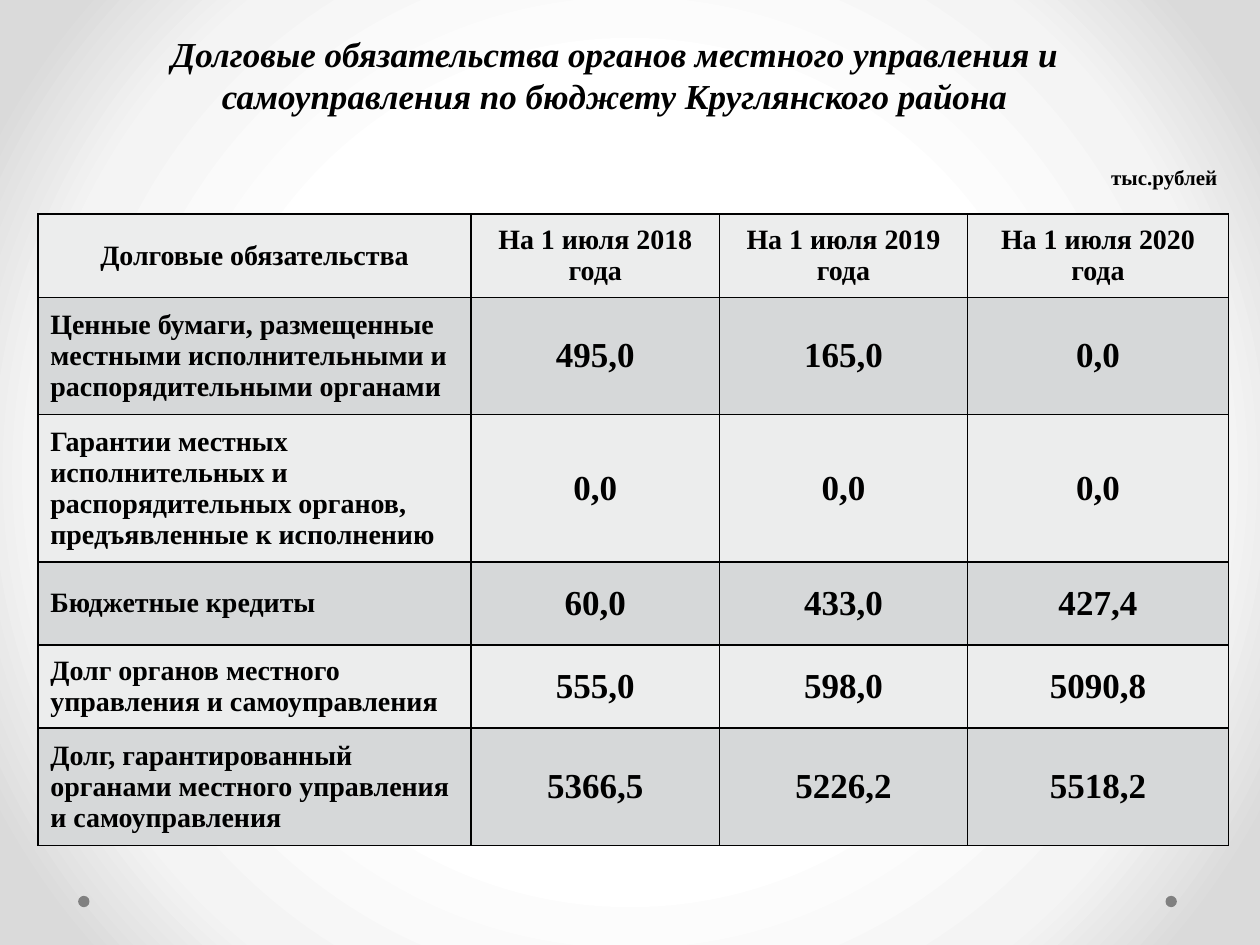
"""Build a slide with a table of local government debt obligations."""
from dataclasses import dataclass

from pptx import Presentation
from pptx.dml.color import RGBColor
from pptx.enum.shapes import MSO_SHAPE
from pptx.enum.text import MSO_ANCHOR, PP_ALIGN as Align
from pptx.oxml import parse_xml
from pptx.oxml.ns import nsdecls
from pptx.slide import Slide
from pptx.table import _Cell as Cell
from pptx.text.text import TextFrame
from pptx.util import Inches, Pt

BLACK = "000000"
DOT_GRAY = "808080"
BANDS = ("ECEDED", "D6D8D9")
GLOW = ((0, "FFFFFF"), (50, "FFFFFF"), (76, "F4F4F4"), (92, "DADADA"), (100, "DADADA"))
COLUMN_WIDTHS = (3.44, 1.97, 1.97, 2.07)


@dataclass(frozen=True)
class Caption:
    text: str
    box: tuple[float, float, float, float]
    size: int
    align: Align
    italic: bool = False
    wrap: bool = True


@dataclass(frozen=True)
class Row:
    height: float
    label: str
    values: tuple[str, str, str]


CAPTIONS = (
    Caption("Долговые обязательства органов местного управления и самоуправления "
            "по бюджету Круглянского района",
            (0.51, 0.21, 8.74, 0.77), 20, Align.CENTER, italic=True),
    Caption("тыс.рублей", (8.71, 1.26, 1.05, 0.3), 12, Align.RIGHT, wrap=False),
)
ROWS = (
    Row(0.66, "Долговые обязательства",
        ("На 1 июля 2018 года", "На 1 июля 2019 года", "На 1 июля 2020 года")),
    Row(0.93, "Ценные бумаги, размещенные местными исполнительными и "
        "распорядительными органами", ("495,0", "165,0", "0,0")),
    Row(1.17, "Гарантии местных исполнительных и распорядительных органов, "
        "предъявленные к исполнению", ("0,0", "0,0", "0,0")),
    Row(0.66, "Бюджетные кредиты", ("60,0", "433,0", "427,4")),
    Row(0.66, "Долг органов местного управления и самоуправления",
        ("555,0", "598,0", "5090,8")),
    Row(0.93, "Долг, гарантированный органами местного управления и "
        "самоуправления", ("5366,5", "5226,2", "5518,2")),
)


def color(value: str) -> RGBColor:
    return RGBColor.from_string(value)


def write(frame: TextFrame, text: str, size: int, align: Align, italic: bool = False) -> None:
    paragraph = frame.paragraphs[0]
    paragraph.text = text
    paragraph.alignment = align
    font = paragraph.font
    font.name, font.size = "Times New Roman", Pt(size)
    font.bold, font.italic = True, italic
    font.color.rgb = color(BLACK)


def paint_background(slide: Slide) -> None:
    stops = "".join(f'<a:gs pos="{pos * 1000}"><a:srgbClr val="{shade}"/></a:gs>'
                    for pos, shade in GLOW)
    center = " ".join(f'{side}="50000"' for side in "ltrb")
    slide.element.cSld.insert(0, parse_xml(
        f'<p:bg {nsdecls("p", "a")}><p:bgPr><a:gradFill rotWithShape="1">'
        f'<a:gsLst>{stops}</a:gsLst><a:path path="circle"><a:fillToRect {center}/></a:path>'
        '</a:gradFill><a:effectLst/></p:bgPr></p:bg>'))


def add_dot(slide: Slide, left: float) -> None:
    dot = slide.shapes.add_shape(MSO_SHAPE.OVAL, *map(Inches, (left, 7.11, 0.09, 0.09)))
    dot.shadow.inherit = False
    dot.fill.solid()
    dot.fill.fore_color.rgb = color(DOT_GRAY)
    dot.line.fill.background()


def add_caption(slide: Slide, caption: Caption) -> None:
    frame = slide.shapes.add_textbox(*map(Inches, caption.box)).text_frame
    frame.word_wrap = caption.wrap
    write(frame, caption.text, caption.size, caption.align, caption.italic)


def style_cell(cell: Cell, fill: str) -> None:
    cell.vertical_anchor = MSO_ANCHOR.MIDDLE
    properties = cell._tc.get_or_add_tcPr()
    for side in "LRTB":
        properties.append(parse_xml(
            f'<a:ln{side} {nsdecls("a")} w="{Pt(1)}"><a:solidFill>'
            f'<a:srgbClr val="{BLACK}"/></a:solidFill></a:ln{side}>'))
    cell.fill.solid()
    cell.fill.fore_color.rgb = color(fill)


def add_debt_table(slide: Slide) -> None:
    size = sum(COLUMN_WIDTHS), sum(row.height for row in ROWS)
    debts = slide.shapes.add_table(
        len(ROWS), len(COLUMN_WIDTHS), *map(Inches, (0.3, 1.7, *size))).table
    for column, width in zip(debts.columns, COLUMN_WIDTHS):
        column.width = Inches(width)
    for r, row in enumerate(ROWS):
        debts.rows[r].height = Inches(row.height)
        for c, text in enumerate((row.label, *row.values)):
            cell = debts.cell(r, c)
            style_cell(cell, BANDS[r % 2])
            write(cell.text_frame, text, 20 if r and c else 16,
                  Align.LEFT if r and not c else Align.CENTER)


def main() -> None:
    deck = Presentation()
    deck.slide_width, deck.slide_height = Inches(10), Inches(7.5)
    slide = deck.slides.add_slide(deck.slide_layouts[6])
    paint_background(slide)
    for left in (9.25, 0.62):
        add_dot(slide, left)
    title, unit = CAPTIONS
    add_caption(slide, title)
    add_debt_table(slide)
    add_caption(slide, unit)
    deck.save("out.pptx")


if __name__ == "__main__":
    main()
